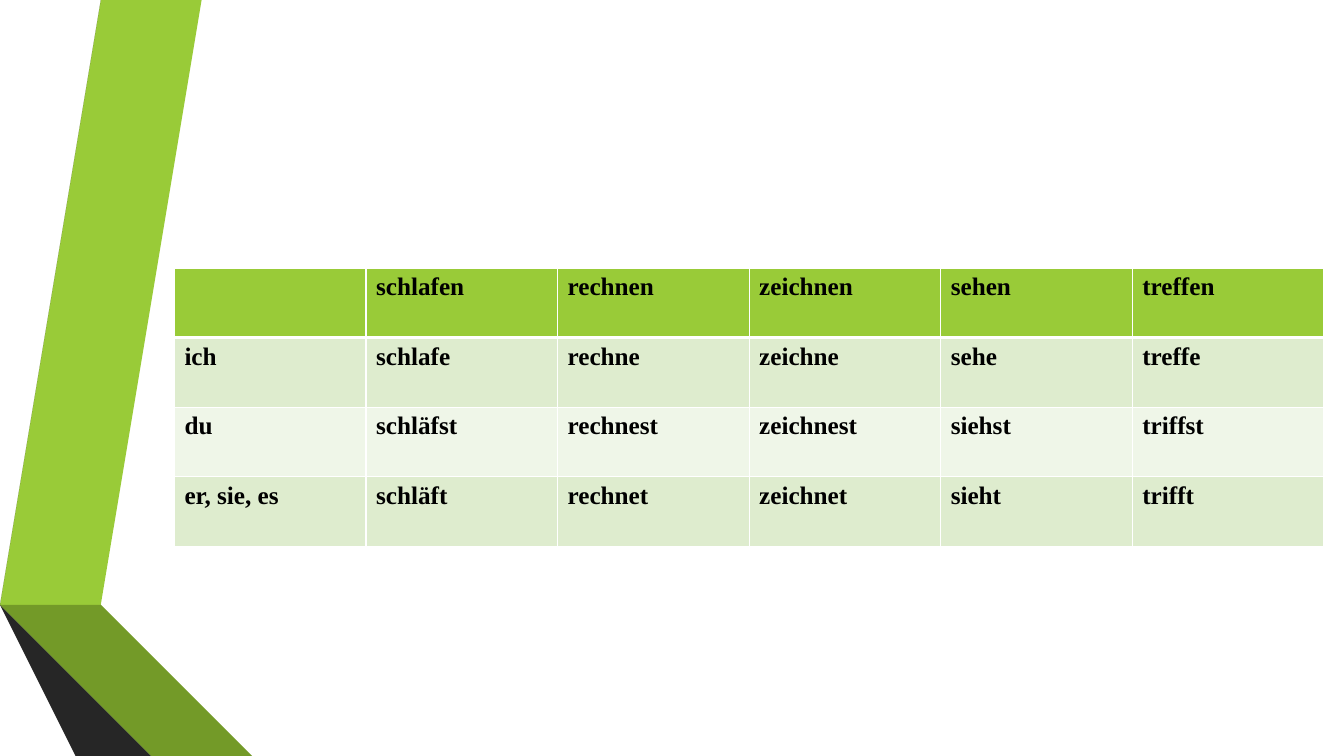
from lxml.etree import SubElement
from pptx import Presentation
from pptx.dml.color import RGBColor
from pptx.oxml.ns import qn
from pptx.util import Inches, Pt

GREEN, PALE, PALER = "99CB38", "DEECCE", "EFF6E8"

RIBBONS = [
    (GREEN, [(0.5, 5.78), (0.77, 5.83), (1.73, 0), (1.45, 0)]),
    ("595959", [(1.39, 0), (1.11, 0), (0.16, 5.73), (0.44, 5.77)]),
    ("262626", [(0.16, 5.73), (1.45, 7.5), (1.51, 7.5)]),
    ("4D671B", [(0.5, 5.79), (2.08, 7.5), (2.14, 7.5)]),
    ("739A28", [(0.5, 5.79), (2.14, 7.5), (2.83, 7.5), (0.77, 5.83), (0.5, 5.78)]),
    ("404040", [(2.02, 7.5), (0.48, 5.83), (0.43, 5.78), (0.44, 5.77),
                (0.16, 5.73), (1.51, 7.5)]),
]

CONJUGATION = [
    ["", "schlafen", "rechnen", "zeichnen", "sehen", "treffen"],
    ["ich", "schlafe", "rechne", "zeichne", "sehe", "treffe"],
    ["du", "schläfst", "rechnest", "zeichnest", "siehst", "triffst"],
    ["er, sie, es", "schläft", "rechnet", "zeichnet", "sieht", "trifft"],
]


def color(value):
    return RGBColor.from_string(value)


class SlideBuilder:
    text_format = {"name": "Times New Roman", "size": Pt(18), "bold": True}
    text_color = "000000"
    border_color = "FFFFFF"

    def __init__(self, page):
        self.page = page

    def ribbon(self, fill, points):
        outline = self.page.shapes.build_freeform(*points[0], scale=Inches(1))
        outline.add_line_segments(points[1:], close=True)
        shape = outline.convert_to_shape()
        shape.shadow.inherit = False
        shape.fill.solid()
        shape.fill.fore_color.rgb = color(fill)
        shape.line.fill.background()

    def border(self, cell, side, width):
        properties = cell._tc.get_or_add_tcPr()
        line = SubElement(properties, qn(f"a:ln{side}"), w=str(Pt(width)))
        fill = SubElement(line, qn("a:solidFill"))
        SubElement(fill, qn("a:srgbClr"), val=self.border_color)

    def cell(self, cell, text, fill, borders):
        for side, width in borders.items():
            self.border(cell, side, width)
        cell.fill.solid()
        cell.fill.fore_color.rgb = color(fill)
        para = cell.text_frame.paragraphs[0]
        para.text = text
        for name, value in self.text_format.items():
            setattr(para.font, name, value)
        para.font.color.rgb = color(self.text_color)

    def table(self, left, top, column_width, row_height, rows, fills):
        columns = len(rows[0])
        table = self.page.shapes.add_table(
            len(rows), columns, Inches(left), Inches(top),
            Inches(column_width * columns), Inches(row_height * len(rows))).table
        for column in table.columns:
            column.width = Inches(column_width)
        for index, (words, fill) in enumerate(zip(rows, fills)):
            table.rows[index].height = Inches(row_height)
            borders = {"L": 1, "R": 1, "T": 3 if index == 1 else 1,
                       "B": 3 if index == 0 else 1}
            for position, word in enumerate(words):
                self.cell(table.cell(index, position), word, fill, borders)


def main():
    deck = Presentation()
    deck.slide_width, deck.slide_height = Inches(13.33), Inches(7.5)
    builder = SlideBuilder(deck.slides.add_slide(deck.slide_layouts[6]))
    for fill, points in RIBBONS:
        builder.ribbon(fill, points)
    builder.table(1.73, 2.66, 1.9, 0.69, CONJUGATION, [GREEN, PALE, PALER, PALE])
    deck.save("out.pptx")


if __name__ == "__main__":
    main()
